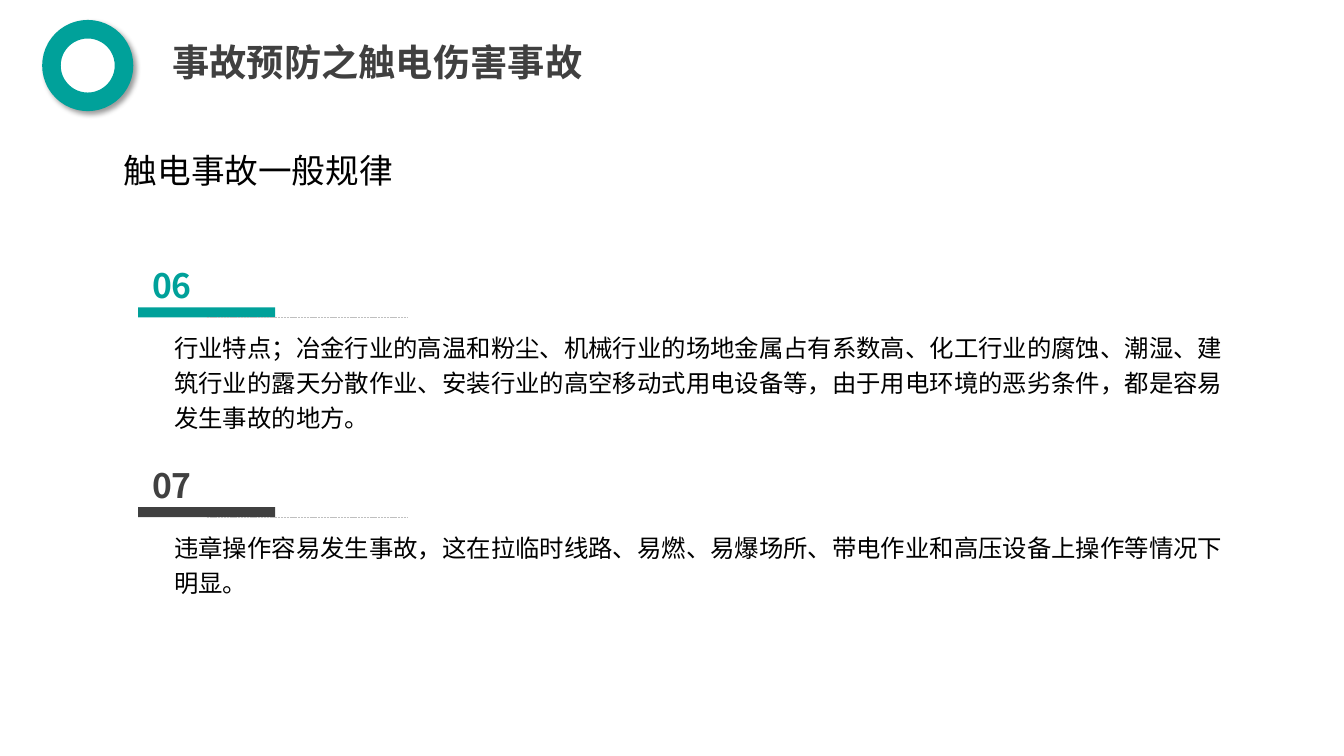
from dataclasses import dataclass

from lxml import etree
from pptx import Presentation
from pptx import util as u
from pptx.dml.color import RGBColor
from pptx.enum import dml, shapes, text
from pptx.oxml import ns

COLORS = {"teal": "00A19A", "dark": "404040", "black": "000000", "white": "FFFFFF", "rule": "BFBFBF"}
CJK_FONT = "Noto Sans CJK SC"
WIDTH, HEIGHT = u.Inches(13.33), u.Inches(7.5)
FIRST_ROW, ROW_STEP = 40.67, 26.4
BAR_HEIGHT = 1.33


@dataclass(frozen=True)
class Area:
    left: float
    top: float
    width: float
    height: float

    def emu(self) -> tuple[int, int, int, int]:
        return across(self.left), down(self.top), across(self.width), down(self.height)


@dataclass(frozen=True)
class Style:
    size: float
    color: str
    font: str = CJK_FONT
    bold: bool = False
    spacing: float = 1.0


@dataclass(frozen=True)
class Rule:
    number: str
    color: str
    height: float
    body: str


RULES = [
    Rule("06", "teal", 15.33, "行业特点；冶金行业的高温和粉尘、机械行业的场地金属占有系数高、化工行业的腐蚀、潮湿、建筑行业的露天分散作业、安装行业的高空移动式用电设备等，由于用电环境的恶劣条件，都是容易发生事故的地方。"),
    Rule("07", "dark", 10.67, "违章操作容易发生事故，这在拉临时线路、易燃、易爆场所、带电作业和高压设备上操作等情况下明显。"),
]


def across(share: float) -> int:
    return round(WIDTH * share / 100)


def down(share: float) -> int:
    return round(HEIGHT * share / 100)


def rgb(name: str) -> RGBColor:
    return RGBColor.from_string(COLORS[name])


def write(box, words: str, style: Style) -> None:
    frame = box.text_frame
    frame.text = words
    frame.word_wrap = True
    frame.auto_size = text.MSO_AUTO_SIZE.SHAPE_TO_FIT_TEXT
    frame.vertical_anchor = text.MSO_ANCHOR.TOP
    para = frame.paragraphs[0]
    para.alignment = text.PP_ALIGN.LEFT
    para.line_spacing = style.spacing
    span = para.runs[0]
    span.font.name = style.font
    span.font.size = u.Pt(style.size)
    span.font.bold = style.bold
    span.font.color.rgb = rgb(style.color)
    east_asian = etree.SubElement(span.font._element, ns.qn("a:ea"))
    east_asian.set("typeface", CJK_FONT)


def add_text(group, area: Area, words: str, style: Style) -> None:
    write(group.add_textbox(*area.emu()), words, style)


def add_ring(page) -> None:
    ring = page.shapes.add_shape(shapes.MSO_SHAPE.OVAL, *Area(3.83, 3.87, 5.4, 9.6).emu())
    ring.fill.solid()
    ring.fill.fore_color.rgb = rgb("white")
    ring.line.color.rgb = rgb("teal")
    ring.line.width = u.Pt(13.25)
    ring.shadow.inherit = False
    effects = ring._element.spPr.find(ns.qn("a:effectLst"))
    shadow = etree.SubElement(effects, ns.qn("a:outerShdw"), blurRad=str(u.Pt(4)),
                              dist=str(u.Pt(3)), dir=str(45 * 60000), algn="tl", rotWithShape="0")
    tint = etree.SubElement(shadow, ns.qn("a:srgbClr"), val=COLORS["black"])
    etree.SubElement(tint, ns.qn("a:alpha"), val="40000")


def add_title(page) -> None:
    title = page.shapes.title
    title.left, title.top, title.width, title.height = Area(12.08, 4.53, 36.53, 7.33).emu()
    write(title, "事故预防之触电伤害事故", Style(26.6, "dark", "Arial", True))


def add_rule(page, rule: Rule, top: float) -> None:
    group = page.shapes.add_group_shape().shapes
    bar = group.add_shape(shapes.MSO_SHAPE.RECTANGLE, *Area(10.28, top, 10.2, BAR_HEIGHT).emu())
    bar.shadow.inherit = False
    bar.fill.solid()
    bar.fill.fore_color.rgb = rgb(rule.color)
    bar.line.fill.background()

    bottom = down(top + BAR_HEIGHT)
    line = group.add_connector(shapes.MSO_CONNECTOR.STRAIGHT, across(15.38), bottom, across(30.3), bottom)
    line.begin_connect(bar, 2)
    line.line.color.rgb = rgb("rule")
    line.line.width = u.Pt(0.5)
    line.line.dash_style = dml.MSO_LINE.SQUARE_DOT
    etree.SubElement(line._element.spPr, ns.qn("a:effectLst"))

    add_text(group, Area(10.58, top - 6.27, 5.25, 6.67), rule.number, Style(24, rule.color, bold=True))
    add_text(group, Area(12.23, top + 2, 80.27, rule.height), rule.body, Style(17.4, "black", spacing=1.2))


def main() -> None:
    deck = Presentation()
    deck.slide_width, deck.slide_height = WIDTH, HEIGHT
    page = deck.slides.add_slide(deck.slide_layouts[5])
    add_ring(page)
    add_title(page)
    add_text(page.shapes, Area(8.48, 19.2, 27.76, 6.67), "触电事故一般规律", Style(24, "black", "Arial"))
    for index, rule in enumerate(RULES):
        add_rule(page, rule, FIRST_ROW + index * ROW_STEP)
    deck.save("out.pptx")


if __name__ == "__main__":
    main()
